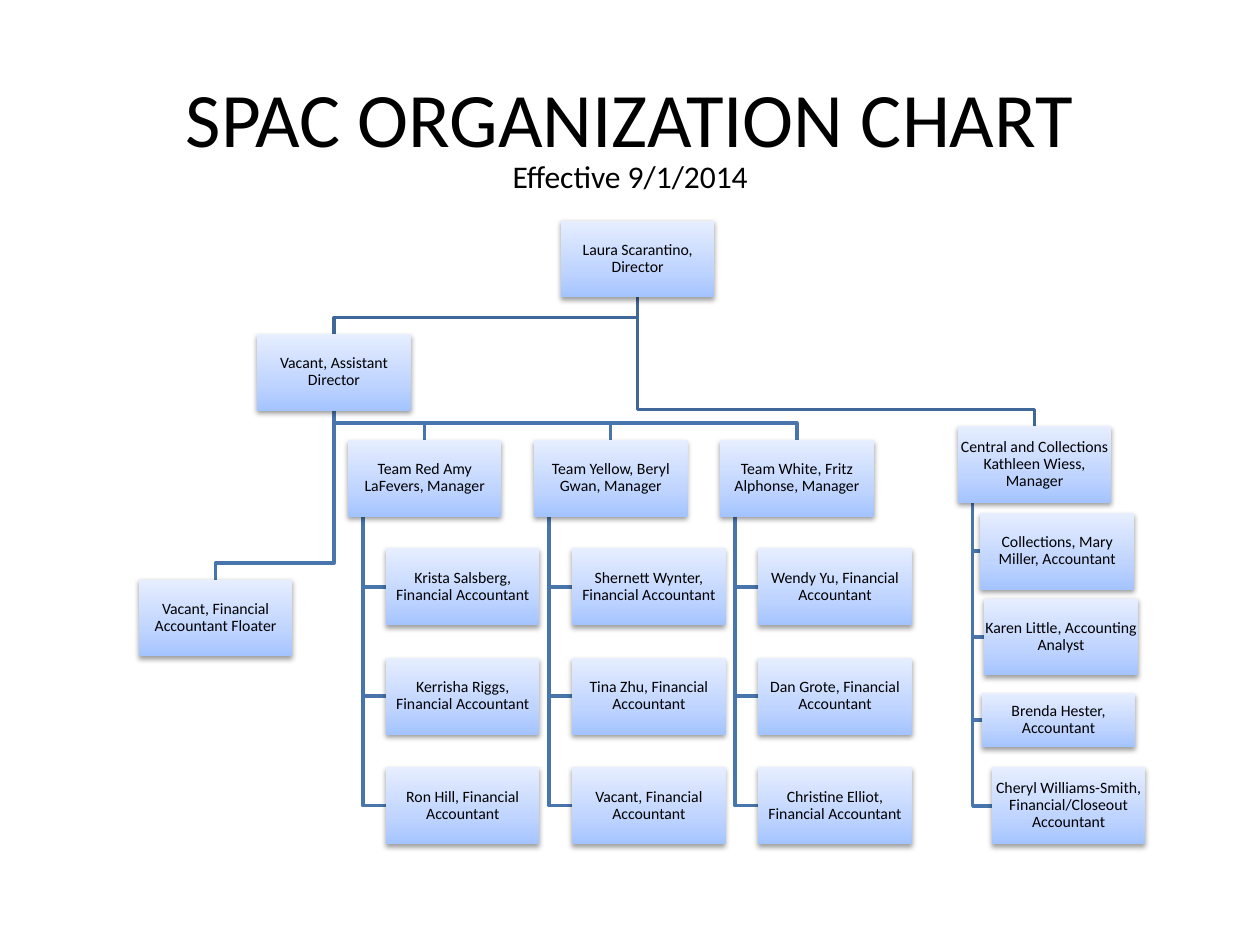
from collections import namedtuple

from lxml.etree import SubElement
from pptx import Presentation
from pptx.dml.color import RGBColor
from pptx.enum.shapes import MSO_SHAPE as Preset
from pptx.enum.text import MSO_ANCHOR as Anchor, PP_ALIGN as Align
from pptx.oxml.ns import qn
from pptx.util import Inches, Pt

# The slide is a grid of 100 columns by 75 rows of square cells
COLUMNS, ROWS, CELL = 100, 75, Inches(0.1)
CARD_W, CARD_H = 12.2, 6.1
RAIL_INSET = 1.2      # from a manager's left edge to the rail below
BEND_RISE = 1.3       # from a card's top up to the bend of its link
TEAM_STEP, STAFF_STEP = 14.77, 8.68
STAFF_INDENT, STAFF_DROP = 3.02, 8.63

COLORS = {"ink": "000000", "link_top": "3F6797", "link": "4875AC",
          "card_low": "A4C4FF", "card_mid": "BFD4FF", "card_high": "E6EEFF"}
CARD_STOPS = [(0, "card_low"), (35, "card_mid"), (100, "card_high")]

TEAMS = [
    ("Team Red Amy LaFevers, Manager",
     ["Krista Salsberg, Financial Accountant",
      "Kerrisha Riggs, Financial Accountant",
      "Ron Hill, Financial Accountant"]),
    ("Team Yellow, Beryl Gwan, Manager",
     ["Shernett Wynter, Financial Accountant",
      "Tina Zhu, Financial Accountant",
      "Vacant, Financial Accountant"]),
    ("Team White, Fritz Alphonse, Manager",
     ["Wendy Yu, Financial Accountant",
      "Dan Grote, Financial Accountant",
      "Christine Elliot, Financial Accountant"]),
]
# Text, indent and drop from the manager's card, height
CENTRAL_STAFF = [
    ("Collections, Mary Miller, Accountant", 1.8, 6.9, CARD_H),
    ("Karen Little, Accounting Analyst", 2.1, 13.7, CARD_H),
    ("Brenda Hester, Accountant", 1.9, 21.2, 4.3),
    ("Cheryl Williams-Smith, Financial/Closeout Accountant", 2.7, 27.1, CARD_H),
]

Box = namedtuple("Box", "x y w h", defaults=(CARD_W, CARD_H))


def cells(*counts):
    return [round(count * CELL) for count in counts]


def set_text(shape, text, size, align, margin=None, spacing=None,
             anchor=Anchor.MIDDLE):
    frame = shape.text_frame
    frame.word_wrap = True
    frame.vertical_anchor = anchor
    if margin is not None:
        for side in ("left", "right", "top", "bottom"):
            setattr(frame, f"margin_{side}", margin)
    para = frame.paragraphs[0]
    para.alignment = align
    para.line_spacing = spacing
    span = para.add_run()
    span.text = text
    for name, value in {"name": "Calibri", "size": Pt(size)}.items():
        setattr(span.font, name, value)
    span.font.color.rgb = RGBColor.from_string(COLORS["ink"])


def add_link(page, points, color="link"):
    corners = [cells(*point) for point in points]
    builder = page.shapes.build_freeform(*corners[0])
    builder.add_line_segments(corners[1:], close=False)
    link = builder.convert_to_shape()
    link.fill.background()
    link.shadow.inherit = False
    link.line.color.rgb = RGBColor.from_string(COLORS[color])
    link.line.width = Pt(2)


def add_drop(page, parent, child, color="link"):
    """Link the foot of one card to the top of another."""
    start, end = parent.x + parent.w / 2, child.x + child.w / 2
    bend = child.y - BEND_RISE
    add_link(page, [(start, parent.y + parent.h), (start, bend),
                    (end, bend), (end, child.y)], color)


def add_card(page, box, text):
    card = page.shapes.add_shape(Preset.RECTANGLE, *cells(*box))
    card.line.fill.background()
    # Three-stop gradient, darkest at the foot
    card.fill.gradient()
    card.fill.gradient_angle = 90
    stops = card._element.spPr.find(qn("a:gradFill")).find(qn("a:gsLst"))
    for stop in list(stops):
        stops.remove(stop)
    for position, color in CARD_STOPS:
        stop = SubElement(stops, qn("a:gs"), pos=str(position * 1000))
        SubElement(stop, qn("a:srgbClr"), val=COLORS[color])
    # Soft shadow below
    card.shadow.inherit = False
    effects = card._element.spPr.find(qn("a:effectLst"))
    shadow = SubElement(effects, qn("a:outerShdw"), blurRad=str(Pt(3.1)),
                        dist=str(Pt(1.6)), dir="5400000", rotWithShape="0")
    tint = SubElement(shadow, qn("a:srgbClr"), val=COLORS["ink"])
    SubElement(tint, qn("a:alpha"), val="38000")
    set_text(card, text, 9, Align.CENTER, Inches(0.01), 0.9)


def add_group(page, box, manager, staff):
    """Place a manager's card and the staff hung from its rail."""
    rail = box.x + RAIL_INSET
    for _, member in staff:
        middle = member.y + member.h / 2
        add_link(page, [(rail, box.y + box.h), (rail, middle),
                        (member.x, middle)])
    add_card(page, box, manager)
    for text, member in staff:
        add_card(page, member, text)


def add_heading(page, box):
    title = page.shapes.add_textbox(*cells(*box))
    set_text(title, "SPAC ORGANIZATION CHART", 44, Align.CENTER)
    date = page.shapes.add_textbox(
        *cells(box.x + 34.7, box.y + 9, 26.3, 4))
    set_text(date, "Effective 9/1/2014", 18, Align.LEFT, anchor=Anchor.TOP)


def add_leaders(page, director, assistant, floater, central, first_team):
    """Place the top cards and the links that run down from them."""
    add_drop(page, director, central, "link_top")
    for index in range(len(TEAMS)):
        team = first_team._replace(x=first_team.x + index * TEAM_STEP)
        add_drop(page, assistant, team)
    add_drop(page, assistant, floater)
    add_drop(page, director, assistant, "link_top")
    add_card(page, director, "Laura Scarantino, Director")
    add_card(page, assistant, "Vacant, Assistant Director")
    add_card(page, floater, "Vacant, Financial Accountant Floater")


def add_teams(page, first):
    for index, (manager, names) in enumerate(TEAMS):
        box = first._replace(x=first.x + index * TEAM_STEP)
        staff = [(name, Box(box.x + STAFF_INDENT,
                            box.y + STAFF_DROP + row * STAFF_STEP))
                 for row, name in enumerate(names)]
        add_group(page, box, manager, staff)


def add_central(page, box):
    staff = [(text, Box(box.x + indent, box.y + drop, h=height))
             for text, indent, drop, height in CENTRAL_STAFF]
    add_group(page, box, "Central and Collections Kathleen Wiess, Manager",
              staff)


def main():
    deck = Presentation()
    deck.slide_width, deck.slide_height = cells(COLUMNS, ROWS)
    page = deck.slides.add_slide(deck.slide_layouts[6])
    first_team, central = Box(27.6, 34.9), Box(76, 33.8)
    add_heading(page, Box(5, 3, 90, 12.5))
    add_leaders(page, Box(44.5, 17.5), Box(20.4, 26.5), Box(11, 46),
                central, first_team)
    add_teams(page, first_team)
    add_central(page, central)
    deck.save("out.pptx")


if __name__ == "__main__":
    main()
